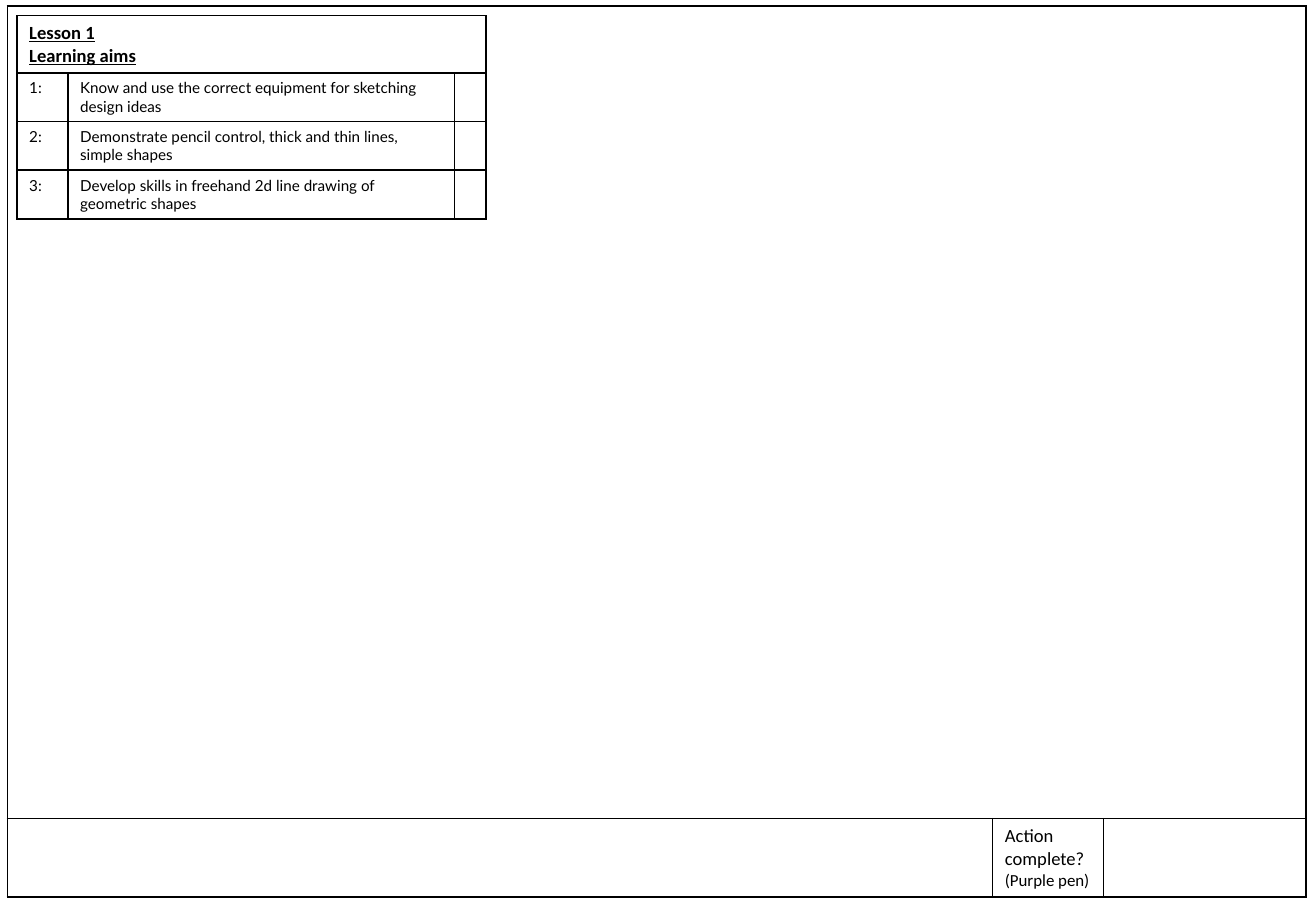
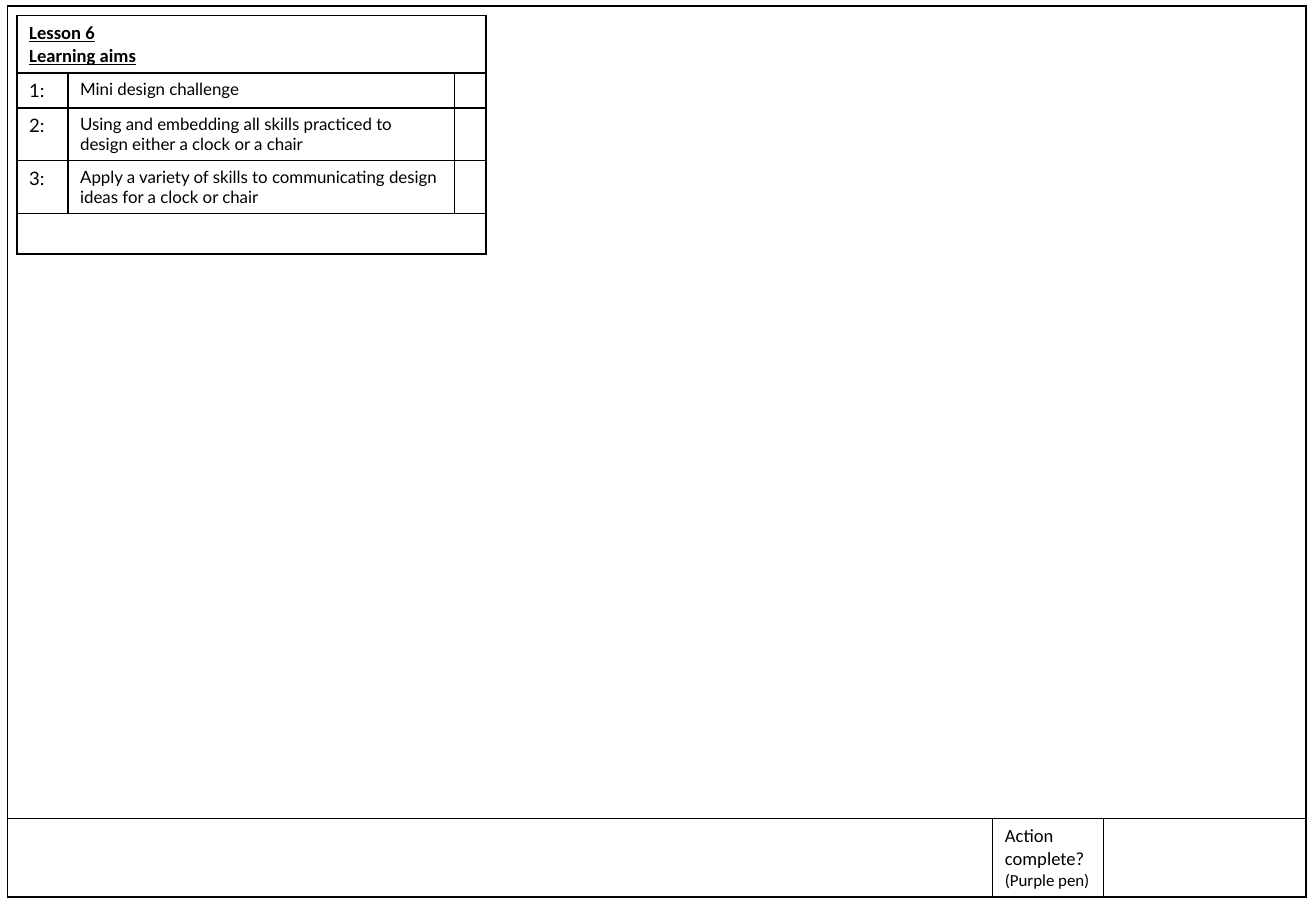
from dataclasses import dataclass

from lxml.etree import SubElement
from pptx import Presentation
from pptx.dml.color import RGBColor
from pptx.enum.text import MSO_ANCHOR
from pptx.oxml.ns import qn
from pptx.util import Inches, Pt


@dataclass(frozen=True)
class Theme:
    ink: str = "000000"
    paper: str = "FFFFFF"
    heading_font: str = "Calibri"
    body_font: str = "Lato"
    heading_size: int = 11
    note_size: int = 10
    blank_size: int = 9
    rule_width: int = 1


THEME = Theme()
SLIDE_SIZE = (10.83, 7.5)
AIMS_LEFT, AIMS_TOP, ROWS_TOP = 0.14, 0.13, 0.6
AIM_COLUMNS = (0.42, 3.18, 0.26)

# One entry per worksheet
LESSONS = [
    dict(
        title="Lesson 1", box_height=1.67, row_heights=(0.4, 0.4, 0.4),
        number_size=9, aim_size=9,
        aims=["Know and use the correct equipment for sketching design ideas",
              "Demonstrate pencil control, thick and thin lines, simple shapes",
              "Develop skills in freehand 2d line drawing of geometric shapes"],
    ),
    dict(
        title="Lesson 6", box_height=1.96, row_heights=(0.29, 0.43, 0.43),
        number_size=11, aim_size=10,
        aims=["Mini design challenge",
              "Using and embedding all skills practiced to design either a clock or a chair",
              "Apply a variety of skills to communicating design ideas for a clock or chair"],
    ),
]


def write(paragraph, text, font, size, bold=False, underline=False):
    """Put one formatted run of text into a paragraph."""
    run = paragraph.add_run()
    run.text = text
    run.font.name = font
    run.font.size = Pt(size)
    run.font.bold = bold
    run.font.underline = underline
    run.font.color.rgb = RGBColor.from_string(THEME.ink)


class Worksheet:
    def __init__(self, deck):
        self.slide = deck.slides.add_slide(deck.slide_layouts[6])

    def rule_cell(self, cell):
        """Draw a thin rule on all four sides of a cell."""
        properties = cell._tc.get_or_add_tcPr()
        for side in ("a:lnL", "a:lnR", "a:lnT", "a:lnB"):
            rule = SubElement(properties, qn(side), w=str(Pt(THEME.rule_width)))
            fill = SubElement(rule, qn("a:solidFill"))
            SubElement(fill, qn("a:srgbClr"), val=THEME.ink)

    def grid(self, left, top, columns, rows, fill=None):
        """Add a ruled table with the given column widths and row heights."""
        table = self.slide.shapes.add_table(
            len(rows), len(columns), Inches(left), Inches(top),
            Inches(sum(columns)), Inches(sum(rows))).table
        table.first_row = table.horz_banding = False
        for column, width in zip(table.columns, columns):
            column.width = Inches(width)
        for row, height in zip(table.rows, rows):
            row.height = Inches(height)
        for cell in table.iter_cells():
            self.rule_cell(cell)
            if fill:
                cell.fill.solid()
                cell.fill.fore_color.rgb = RGBColor.from_string(fill)
            else:
                cell.fill.background()
            # Small end mark, so that blank cells do not stretch their row
            SubElement(cell.text_frame.paragraphs[0]._p, qn("a:endParaRPr"),
                       sz=str(THEME.blank_size * 100))
        return table

    def page_frame(self):
        frame = self.grid(0.06, 0.05, (8.11, 0.91, 1.67), (6.69, 0.64))
        frame.cell(0, 0).merge(frame.cell(0, 2))
        action = frame.cell(1, 1)
        action.vertical_anchor = MSO_ANCHOR.MIDDLE
        lines = action.text_frame
        write(lines.paragraphs[0], "Action complete?", THEME.heading_font, THEME.heading_size)
        write(lines.add_paragraph(), "(Purple pen)", THEME.heading_font, THEME.note_size)

    def aims_heading(self, title, height):
        box = self.grid(AIMS_LEFT, AIMS_TOP, (sum(AIM_COLUMNS),), (height,), THEME.paper)
        lines = box.cell(0, 0).text_frame
        for paragraph, text in ((lines.paragraphs[0], title),
                                (lines.add_paragraph(), "Learning aims")):
            write(paragraph, text, THEME.heading_font, THEME.heading_size,
                  bold=True, underline=True)

    def aims_list(self, aims, row_heights, number_size, aim_size):
        checklist = self.grid(AIMS_LEFT, ROWS_TOP, AIM_COLUMNS, row_heights)
        for row, aim in enumerate(aims):
            for column, (text, size) in enumerate(((f"{row + 1}:", number_size),
                                                   (aim, aim_size))):
                write(checklist.cell(row, column).text_frame.paragraphs[0],
                      text, THEME.body_font, size)


def main():
    deck = Presentation()
    deck.slide_width, deck.slide_height = map(Inches, SLIDE_SIZE)
    for lesson in LESSONS:
        sheet = Worksheet(deck)
        sheet.page_frame()
        sheet.aims_heading(lesson["title"], lesson["box_height"])
        sheet.aims_list(lesson["aims"], lesson["row_heights"],
                        lesson["number_size"], lesson["aim_size"])
    deck.save("out.pptx")


if __name__ == "__main__":
    main()
